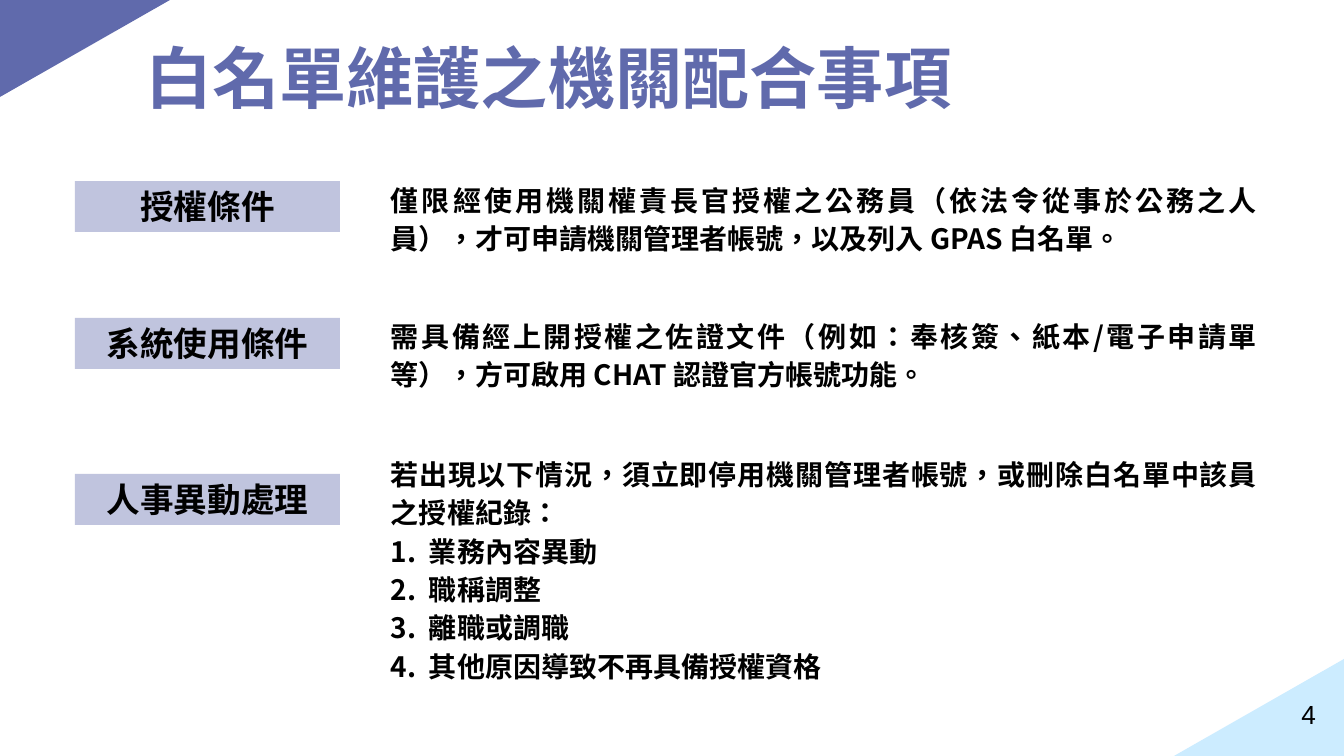
from lxml import etree
from pptx import Presentation
from pptx.dml.color import RGBColor
from pptx.enum.shapes import MSO_SHAPE
from pptx.enum.text import MSO_ANCHOR, MSO_AUTO_SIZE, PP_ALIGN
from pptx.oxml.ns import qn
from pptx.util import Pt

EMU_PER_PX = 914400 / 100.8
TITLE_ONLY = 5
RECTANGLE = MSO_SHAPE.RECTANGLE
TOP, MIDDLE = MSO_ANCHOR.TOP, MSO_ANCHOR.MIDDLE
GROW = MSO_AUTO_SIZE.SHAPE_TO_FIT_TEXT
NO_AUTOFIT = MSO_AUTO_SIZE.NONE
LEFT, CENTER, RIGHT, JUSTIFY = PP_ALIGN.LEFT, PP_ALIGN.CENTER, PP_ALIGN.RIGHT, PP_ALIGN.JUSTIFY
CJK_FONT = "Noto Sans CJK SC"
COLORS = {"purple": "606AAC", "sky": "CCECFF", "label": "C0C4DE", "text": "000000"}


def px(*lengths):
    return [round(length * EMU_PER_PX) for length in lengths]


def format_text(box, size, font, color, bold, align, anchor, autosize, insets, spacing=1.0):
    frame = box.text_frame
    frame.word_wrap = True
    frame.auto_size = autosize
    frame.vertical_anchor = anchor
    side, edge = px(*insets)
    frame.margin_left = frame.margin_right = side
    frame.margin_top = frame.margin_bottom = edge
    for para in frame.paragraphs:
        para.alignment = align
        para.line_spacing = spacing
        for span in para.runs:
            span.font.size = Pt(size)
            span.font.bold = bold
            span.font.name = font
            span.font.color.rgb = RGBColor.from_string(COLORS[color])
            properties = span.font._element
            properties.set("lang", "zh-TW")
            etree.SubElement(properties, qn("a:ea")).set("typeface", CJK_FONT)


deck = Presentation()
deck.slide_width, deck.slide_height = px(1344, 756)
page = deck.slides.add_slide(deck.slide_layouts[TITLE_ONLY])
shapes = page.shapes

corners = [
    ([(0, 0), (170, 0), (0, 97)], "purple"),
    ([(1344, 659), (1174, 756), (1344, 756)], "sky"),
]
for points, color in corners:
    builder = shapes.build_freeform(*points[0], scale=EMU_PER_PX)
    builder.add_line_segments(points[1:], close=True)
    corner = builder.convert_to_shape()
    corner.shadow.inherit = False
    corner.fill.solid()
    corner.fill.fore_color.rgb = RGBColor.from_string(COLORS[color])
    corner.line.fill.background()

title = shapes.title
title.left, title.top, title.width, title.height = px(145, 31, 841, 101)
title.text_frame.text = "白名單維護之機關配合事項"
format_text(title, 48, CJK_FONT, "purple", True, LEFT, MIDDLE, NO_AUTOFIT, (0, 0), 0.9)

number = shapes.add_textbox(*px(1245, 685, 81, 58))
number.text_frame.text = "4"
format_text(number, 18.7, "Arial", "text", False, RIGHT, MIDDLE, NO_AUTOFIT, (10, 10))

sections = [
    ("授權條件", 181, 174, 85,
     "僅限經使用機關權責長官授權之公務員（依法令從事於公務之人員），才可申請機關管理者帳號，以及列入 GPAS 白名單。", []),
    ("系統使用條件", 318, 310, 85,
     "需具備經上開授權之佐證文件（例如：奉核簽、紙本/電子申請單等），方可啟用 CHAT 認證官方帳號功能。", []),
    ("人事異動處理", 474, 448, 239,
     "若出現以下情況，須立即停用機關管理者帳號，或刪除白名單中該員之授權紀錄：",
     ["業務內容異動", "職稱調整", "離職或調職", "其他原因導致不再具備授權資格"]),
]
for heading, label_top, body_top, body_height, rule, cases in sections:
    label = shapes.add_shape(RECTANGLE, *px(75, label_top, 265, 51))
    label.shadow.inherit = False
    label.fill.solid()
    label.fill.fore_color.rgb = RGBColor.from_string(COLORS["label"])
    label.line.fill.background()
    label.text_frame.text = heading
    format_text(label, 24, "Arial", "text", True, CENTER, TOP, GROW, (4, 5))

    body = shapes.add_textbox(*px(365, body_top, 902, body_height))
    body.text_frame.text = "\n".join([rule, *cases])
    for index, para in enumerate(body.text_frame.paragraphs):
        margin, indent = px(54, -38) if index else px(16, 0)
        properties = para._p.get_or_add_pPr()
        properties.set("marL", str(margin))
        properties.set("indent", str(indent))
        properties.set("hangingPunct", "0")
        if index:
            etree.SubElement(properties, qn("a:buFont")).set("typeface", "+mj-lt")
            etree.SubElement(properties, qn("a:buAutoNum")).set("type", "arabicPeriod")
    format_text(body, 20, CJK_FONT, "text", True, JUSTIFY, TOP, GROW, (10, 5), 1.14)

deck.save("out.pptx")
